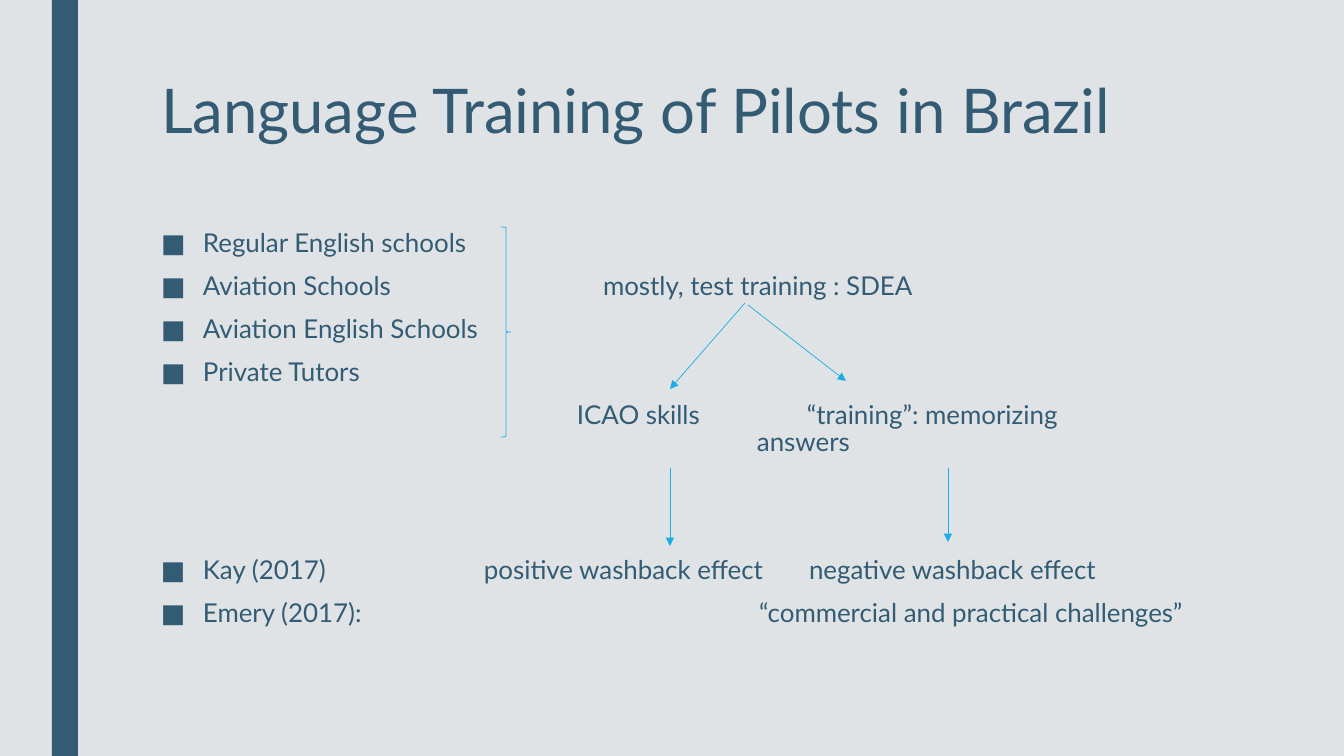
from lxml.etree import SubElement
from pptx import Presentation
from pptx.dml.color import RGBColor
from pptx.enum.shapes import MSO_CONNECTOR as Connector, MSO_SHAPE as Shape
from pptx.enum.text import MSO_ANCHOR as Anchor, MSO_AUTO_SIZE as AutoSize, PP_ALIGN as Align
from pptx.oxml.ns import qn
from pptx.util import Emu, Pt

PX = 914400 / 100.8
BACKGROUND, NAVY, SKY = "DFE3E5", "335B74", "1CADE4"
LIST_LEFT, FIRST_ROW, ROW_STEP = 161, 232, 43


def px(length):
    return Emu(round(length * PX))


def colour(code):
    return RGBColor.from_string(code)


class SlideBuilder:
    """Holds the style and the current slide, and draws each kind of element."""

    def __init__(self, deck):
        self.font, self.size, self.spacing = "Lato", 18.5, 0.84
        self.page = deck.slides.add_slide(deck.slide_layouts[5])
        fill = self.page.background.fill
        fill.solid()
        fill.fore_color.rgb = colour(BACKGROUND)

    def add_span(self, para, text, size, spacing):
        para.alignment, para.line_spacing = Align.LEFT, spacing
        span = para.add_run()
        span.text = text
        span.font.name, span.font.size = self.font, Pt(size)
        span.font.color.rgb = colour(NAVY)

    def prepare(self, box):
        frame = box.text_frame
        frame.word_wrap, frame.auto_size = True, AutoSize.NONE
        frame.vertical_anchor = Anchor.TOP
        frame.margin_left = frame.margin_right = 0
        frame.margin_top = frame.margin_bottom = 0
        return frame

    def title(self, text, left, top, width, height):
        box = self.page.shapes.title
        box.left, box.top, box.width, box.height = map(px, (left, top, width, height))
        self.add_span(self.prepare(box).paragraphs[0], text, 44, 0.89)

    def text(self, lines, left, top, width, height, indent=0, bullet=False):
        box = self.page.shapes.add_textbox(*map(px, (left, top, width, height)))
        frame = self.prepare(box)
        for index, line in enumerate(lines):
            para = frame.add_paragraph() if index else frame.paragraphs[0]
            self.add_span(para, line, self.size, self.spacing)
            para.space_before, para.space_after = Pt(10 if index else 0), Pt(2)
            properties = para._p.get_or_add_pPr()
            properties.set("marL", str(px(42 if bullet else 0)))
            properties.set("indent", str(px(-42 if bullet else indent)))
            if bullet:
                SubElement(properties, qn("a:buFont"), typeface="Lato")
                SubElement(properties, qn("a:buChar"), char="■")

    def bar(self, left, top, width, height):
        bar = self.page.shapes.add_shape(Shape.RECTANGLE, *map(px, (left, top, width, height)))
        bar.shadow.inherit = False
        bar.fill.solid()
        bar.fill.fore_color.rgb = colour(NAVY)
        bar.line.fill.background()

    def brace(self, left, top, width, height):
        brace = self.page.shapes.add_shape(Shape.RIGHT_BRACE, *map(px, (left, top, width, height)))
        brace.shadow.inherit = False
        brace.fill.background()
        brace.line.color.rgb, brace.line.width = colour(SKY), Pt(0.5)

    def arrow(self, *ends):
        arrow = self.page.shapes.add_connector(Connector.STRAIGHT, *map(px, ends))
        arrow.line.color.rgb, arrow.line.width = colour(SKY), Pt(0.5)
        SubElement(arrow.line._get_or_add_ln(), qn("a:tailEnd"), type="triangle")
        SubElement(arrow._element.spPr, qn("a:effectLst"))


def row(number):
    return FIRST_ROW + number * ROW_STEP


def main():
    deck = Presentation()
    deck.slide_width, deck.slide_height = px(1344), px(756)
    slide = SlideBuilder(deck)

    slide.bar(52, 0, 26, 756)
    slide.title("Language Training of Pilots in Brazil", LIST_LEFT, 81, 1038, 104)

    providers = ["Regular English schools", "Aviation Schools",
                 "Aviation English Schools", "Private Tutors"]
    slide.text(providers, LIST_LEFT, row(0), 335, 170, bullet=True)
    slide.text(["Kay (2017)", "Emery (2017):"], LIST_LEFT, 559, 300, 80, bullet=True)

    labels = [
        ("mostly, test training : SDEA", 603, row(1), 340),
        ("ICAO skills", 577, row(4), 160),
        ("positive washback effect", 484, 559, 300),
        ("negative washback effect", 809, 559, 320),
        ("“commercial and practical challenges”", 759, 602, 450),
    ]
    for label, left, top, width in labels:
        slide.text([label], left, top, width, 30)
    slide.text(["“training”: memorizing answers"], 757, row(4), 330, 58, indent=50)

    slide.brace(501, 227, 10, 210)
    for ends in [(670, 468, 670, 546), (948, 468, 948, 542),
                 (745, 303, 670, 389), (748, 305, 846, 381)]:
        slide.arrow(*ends)

    deck.save("out.pptx")


if __name__ == "__main__":
    main()
